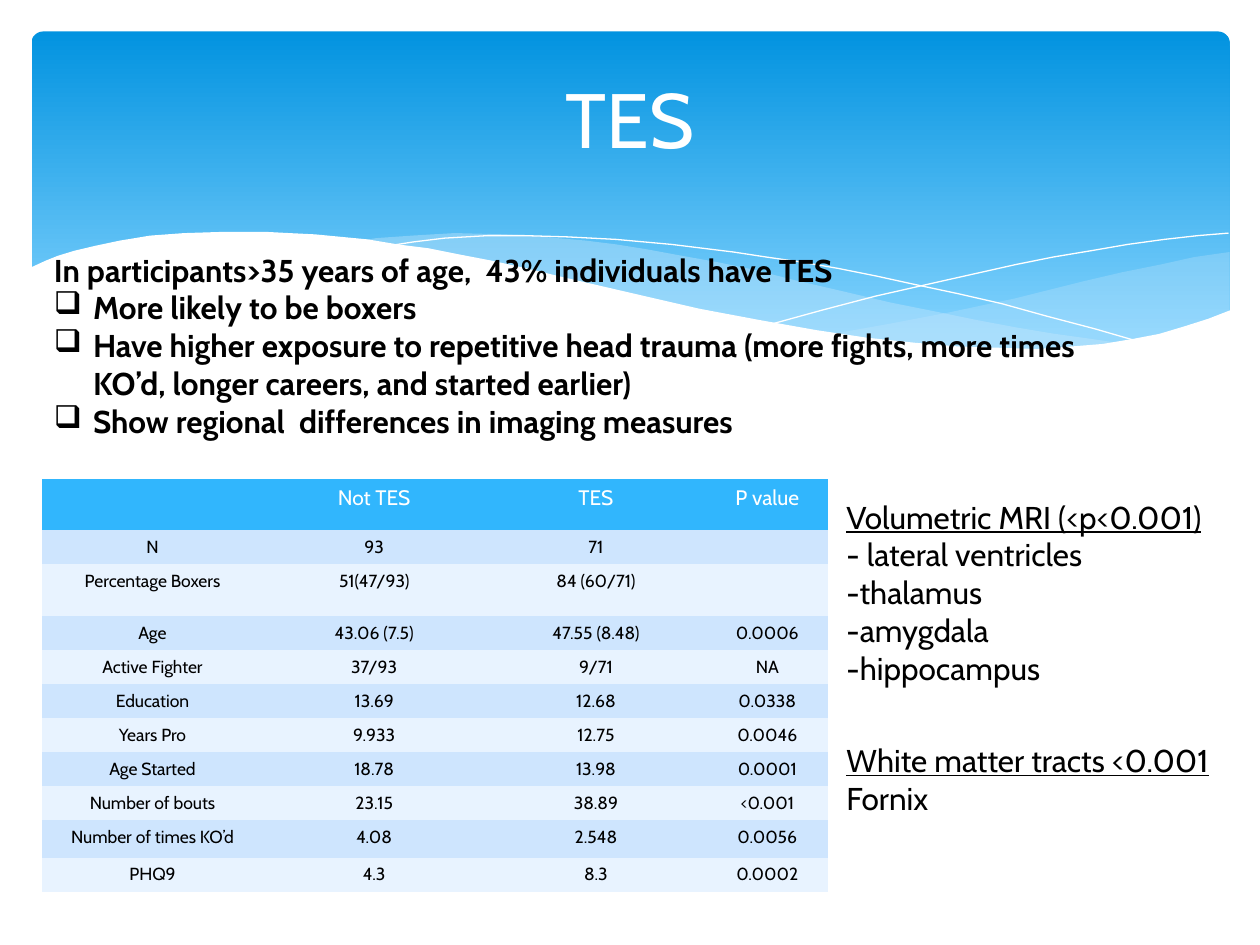
from dataclasses import dataclass
from lxml.etree import SubElement as Sub
from pptx import Presentation
from pptx.dml.color import RGBColor as RGB
from pptx.enum.shapes import MSO_SHAPE as Shape
from pptx.enum.text import MSO_ANCHOR as Anchor, MSO_AUTO_SIZE as Auto, PP_ALIGN as Align
from pptx.oxml.ns import qn
from pptx.util import Inches, Pt


@dataclass(frozen=True)
class Theme:
    font: str = "Cabin"
    white: str = "FFFFFF"
    black: str = "000000"
    top: str = "0293E0"
    base: str = "83D3FE"
    mist: str = "C6E7FC"
    head: str = "31B6FD"
    bands: tuple = ("CEE5FE", "E8F3FF")
    title: int = 44
    body: int = 18
    label: int = 12
    cell: int = 10


def apply(item, form):
    for key, value in form.items():
        setattr(item, key, value)


class Deck:
    def __init__(self, theme):
        self.theme = theme
        self.file = Presentation()
        apply(self.file, {"slide_width": Inches(10), "slide_height": Inches(7.5)})
        self.slide = self.file.slides.add_slide(self.file.slide_layouts[5])
        self.shapes = self.slide.shapes

    def style(self, run, size, color, **form):
        apply(run.font, {"name": self.theme.font, "size": Pt(size), **form})
        run.font.color.rgb = RGB.from_string(color)

    def place(self, shape, box):
        apply(shape, dict(zip(("left", "top", "width", "height"), map(Inches, box))))

    def title(self, text, box):
        shape = self.shapes.title
        self.place(shape, box)
        self.shapes._spTree.append(shape._element)
        frame = shape.text_frame
        apply(frame, {"text": text, "vertical_anchor": Anchor.MIDDLE, "word_wrap": True})
        line = frame.paragraphs[0]
        line.alignment = Align.CENTER
        self.style(line.runs[0], self.theme.title, self.theme.white)

    def banner(self, box):
        shape = self.shapes.add_shape(Shape.ROUNDED_RECTANGLE, *map(Inches, box))
        shape.adjustments[0] = 0.034
        shape.shadow.inherit = False
        shape.line.fill.background()
        shape.fill.gradient()
        shape.fill.gradient_angle = 270
        stops = ((0, self.theme.top), (0.9, self.theme.base))
        for stop, (spot, color) in zip(shape.fill.gradient_stops, stops):
            stop.position = spot
            stop.color.rgb = RGB.from_string(color)

    def wave(self, dots, fill=None, alpha=100):
        first, *rest = [(Inches(x), Inches(y)) for x, y in dots]
        pen = self.shapes.build_freeform(*first)
        pen.add_line_segments(rest, close=fill is not None)
        shape = pen.convert_to_shape()
        shape.shadow.inherit = False
        if fill is None:
            shape.fill.background()
            shape.line.color.rgb = RGB.from_string(self.theme.white)
            shape.line.width = Pt(0)
            return
        shape.line.fill.background()
        shape.fill.solid()
        shape.fill.fore_color.rgb = RGB.from_string(fill)
        if alpha < 100:
            color = shape._element.spPr.find(qn("a:solidFill"))[0]
            Sub(color, qn("a:alpha"), val=str(alpha * 1000))

    def table(self, rows, left, top, wide, high):
        theme = self.theme
        grid = self.shapes.add_table(len(rows), len(wide), Inches(left), Inches(top),
                                     Inches(sum(wide)), Inches(sum(high))).table
        grid._tbl.tblPr[0].text = "{2D5ABB26-0587-4C30-8999-92F81FD0307C}"
        for col, width in zip(grid.columns, wide):
            col.width = Inches(width)
        for i, (row, height, texts) in enumerate(zip(grid.rows, high, rows)):
            row.height = Inches(height)
            fill = theme.bands[(i - 1) % 2] if i else theme.head
            size, ink = (theme.cell, theme.black) if i else (theme.label, theme.white)
            for cell, text in zip(row.cells, texts):
                cell.fill.solid()
                cell.fill.fore_color.rgb = RGB.from_string(fill)
                line = cell.text_frame.paragraphs[0]
                line.alignment = Align.CENTER
                if text:
                    run = line.add_run()
                    run.text = text
                    self.style(run, size, ink)
                else:
                    line._p.get_or_add_endParaRPr().set("sz", str(size * 100))

    def text(self, lines, box, mark=None, **form):
        shape = self.shapes.add_textbox(*map(Inches, box))
        frame = shape.text_frame
        apply(frame, {"word_wrap": True, "auto_size": Auto.SHAPE_TO_FIT_TEXT})
        for i, text in enumerate(lines):
            line = frame.add_paragraph() if i else frame.paragraphs[0]
            run = line.add_run()
            run.text = text
            self.style(run, self.theme.body, self.theme.black, underline=not (i or mark), **form)
            if mark and i:
                props = line._p.get_or_add_pPr()
                dent = Inches(0.31)
                props.set("marL", str(dent))
                props.set("indent", str(-dent))
                Sub(props, qn("a:buChar"), char=mark)


RIGHT = [(9.76, 2), (9.48, 2.04), (9.21, 2.1), (8.91, 2.16), (8.61, 2.23), (8.05, 2.37),
         (7.53, 2.48), (7.06, 2.57), (6.61, 2.65), (6.91, 2.69), (7.19, 2.72), (7.45, 2.75),
         (7.81, 2.77), (8.14, 2.78), (8.44, 2.77), (8.72, 2.74), (8.97, 2.7), (9.21, 2.65),
         (9.42, 2.59), (9.63, 2.52), (9.76, 2.47)]
BROAD = [(8.93, 2.73), (8.66, 2.69), (8.37, 2.65), (8.07, 2.6), (7.75, 2.54), (7.41, 2.47),
         (7.06, 2.4), (6.68, 2.31), (6.29, 2.22), (5.98, 2.14), (5.69, 2.08), (5.41, 2.03),
         (5.14, 1.98), (4.89, 1.94), (4.65, 1.91), (4.42, 1.89), (4.2, 1.87), (3.99, 1.86),
         (3.61, 1.85), (3.28, 1.87), (2.99, 1.89), (2.86, 1.91), (3.23, 1.96), (3.62, 2.03),
         (4.04, 2.11), (4.49, 2.22), (4.91, 2.32), (5.3, 2.4), (5.66, 2.48), (6.01, 2.55),
         (6.34, 2.61), (6.65, 2.66), (6.95, 2.7), (7.22, 2.74), (7.48, 2.76), (7.85, 2.78),
         (8.18, 2.78), (8.48, 2.77), (8.76, 2.75)]
FALL = [(3.09, 1.95), (3.28, 1.92), (3.53, 1.89), (3.87, 1.87), (4.16, 1.87), (4.5, 1.88),
        (4.89, 1.9), (5.33, 1.94), (5.82, 2), (6.08, 2.04), (6.36, 2.08), (6.65, 2.13),
        (6.95, 2.19), (7.27, 2.26), (7.6, 2.33), (7.95, 2.41), (8.31, 2.51), (8.69, 2.61),
        (9.07, 2.72)]
RISE = [(6.13, 2.57), (6.53, 2.46), (6.95, 2.35), (7.48, 2.23), (8.06, 2.1), (8.36, 2.04),
        (8.66, 1.99), (8.95, 1.94), (9.24, 1.9), (9.51, 1.87), (9.75, 1.85)]
FRONT = [(9.77, 2.46), (9.59, 2.53), (9.4, 2.59), (9.2, 2.65), (8.99, 2.69), (8.75, 2.73),
         (8.5, 2.75), (8.23, 2.77), (7.93, 2.76), (7.61, 2.75), (7.26, 2.72), (6.88, 2.68),
         (6.48, 2.62), (6.03, 2.54), (5.55, 2.45), (5.03, 2.33), (4.47, 2.2), (4.18, 2.13),
         (3.91, 2.07), (3.65, 2.02), (3.4, 1.97), (3.16, 1.94), (2.92, 1.9), (2.71, 1.88),
         (2.5, 1.86), (2.3, 1.85), (2.11, 1.84), (1.77, 1.84), (1.46, 1.85), (1.19, 1.87),
         (0.95, 1.91), (0.76, 1.95), (0.59, 1.99), (0.46, 2.03), (0.36, 2.07), (0.23, 2.13),
         (0.23, 3.29), (9.77, 3.29)]
ROWS = [
    ("", "Not TES", "TES", "P value"),
    ("N", "93", "71", ""),
    ("Percentage Boxers", "51(47/93)", "84 (60/71)", ""),
    ("Age", "43.06 (7.5)", "47.55 (8.48)", "0.0006"),
    ("Active Fighter", "37/93", "9/71", "NA"),
    ("Education", "13.69", "12.68", "0.0338"),
    ("Years Pro", "9.933", "12.75", "0.0046"),
    ("Age Started", "18.78", "13.98", "0.0001"),
    ("Number of bouts", "23.15", "38.89", "<0.001"),
    ("Number of times KO’d", "4.08", "2.548", "0.0056"),
    ("PHQ9", "4.3", "8.3", "0.0002"),
]
POINTS = [
    "In participants>35 years of age,  43% individuals have TES",
    "More likely to be boxers",
    "Have higher exposure to repetitive head trauma (more fights, more times KO’d, "
    "longer careers, and started earlier)",
    "Show regional  differences in imaging measures",
]
SCANS = ["Volumetric MRI (<p<0.001)", "- lateral ventricles", "-thalamus", "-amygdala",
         "-hippocampus"]
TRACTS = ["White matter tracts <0.001", "Fornix"]


def main():
    theme = Theme()
    deck = Deck(theme)
    deck.banner((0.25, 0.25, 9.51, 2.7))
    deck.wave(RIGHT, theme.mist, 29)
    deck.wave(BROAD, theme.mist, 40)
    deck.wave(FALL)
    deck.wave(RISE)
    deck.wave(FRONT, theme.white)
    deck.title("TES", (0.5, 0.25, 9, 1.37))
    deck.table(ROWS, 0.33, 3.8, [1.76] * 3 + [0.96],
               [0.41, 0.27, 0.41] + [0.27] * 6 + [0.3, 0.27])
    deck.text(SCANS, (6.62, 3.9, 5, 1.62))
    deck.text(POINTS, (0.33, 1.94, 8.79, 1.62), mark="❑", bold=True)
    deck.text(TRACTS, (6.62, 5.83, 3.3, 1.01))
    deck.file.save("out.pptx")


if __name__ == "__main__":
    main()
